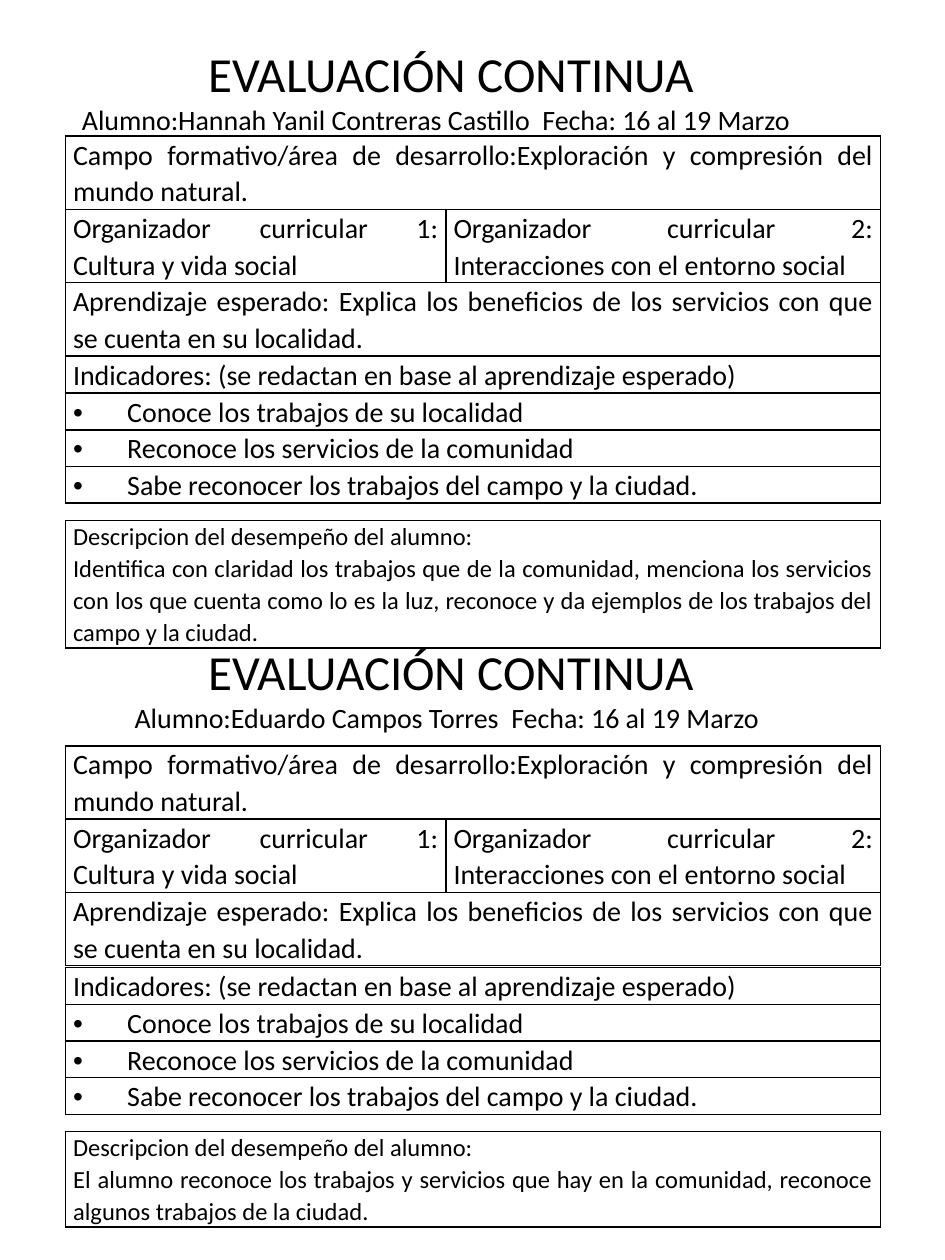
import pptx
import pptx.dml.color
import pptx.enum.text
import pptx.oxml
import pptx.util
from pptx.oxml.ns import nsdecls
from pptx.util import Inches

ALIGN = pptx.enum.text.PP_ALIGN
LEFT, WIDTH = 0.52, 6.47
INDENT = Inches(0.38)
BLACK = "000000"
CELL_FORMAT = {"margin_left": Inches(0.06), "margin_right": Inches(0.06),
               "margin_top": 0, "margin_bottom": 0}
FRAME_FORMAT = {"word_wrap": False,
                "auto_size": pptx.enum.text.MSO_AUTO_SIZE.NONE,
                "vertical_anchor": pptx.enum.text.MSO_ANCHOR.MIDDLE}

SUBJECT_ROWS = [
    ["Campo formativo/área de desarrollo:Exploración y compresión del mundo natural."],
    ["Organizador curricular 1: Cultura y vida social",
     "Organizador curricular 2: Interacciones con el entorno social"],
    ["Aprendizaje esperado: Explica los beneficios de los servicios con que se cuenta en su localidad."],
]
INDICATORS_HEADING = "Indicadores: (se redactan en base al aprendizaje esperado)"
INDICATORS = [
    " Conoce los trabajos de su localidad",
    " Reconoce los servicios de la comunidad",
    " Sabe reconocer los trabajos del campo y la ciudad.",
]
DESCRIPTION_HEADING = "Descripcion del desempeño del alumno:"


def color(value):
    return pptx.dml.color.RGBColor.from_string(value)


def apply_format(target, values):
    for name, value in values.items():
        setattr(target, name, value)


def write_paragraphs(frame, lines, alignment, spacing=1.0):
    """Write (text, size) pairs as paragraphs."""
    for index, (text, size) in enumerate(lines):
        paragraph = frame.add_paragraph() if index else frame.paragraphs[0]
        apply_format(paragraph, {"alignment": alignment, "line_spacing": spacing})
        run = paragraph.add_run()
        run.text = text
        apply_format(run.font, {"size": pptx.util.Pt(size), "name": "Calibri", "bold": False})
        run.font.color.rgb = color(BLACK)


def add_bullet(paragraph):
    properties = paragraph._p.get_or_add_pPr()
    properties.set("marL", str(INDENT))
    properties.set("indent", str(-INDENT))
    properties.append(pptx.oxml.parse_xml(
        f'<a:buFont {nsdecls("a")} typeface="Arial"/>'))
    properties.append(pptx.oxml.parse_xml(f'<a:buChar {nsdecls("a")} char="•"/>'))


def format_cell(cell):
    apply_format(cell, CELL_FORMAT)
    cell.fill.background()
    properties = cell._tc.get_or_add_tcPr()
    for index, side in enumerate(("lnL", "lnR", "lnT", "lnB")):
        properties.insert(index, pptx.oxml.parse_xml(
            f'<a:{side} {nsdecls("a")} w="12700"><a:solidFill>'
            f'<a:srgbClr val="{BLACK}"/></a:solidFill></a:{side}>'))


def add_grid(slide, top, height, row_count, column_widths):
    table = slide.shapes.add_table(
        row_count, len(column_widths), Inches(LEFT), Inches(top),
        Inches(WIDTH), Inches(height)).table
    apply_format(table, {"first_row": False, "horz_banding": False})
    for column, width in zip(table.columns, column_widths):
        column.width = Inches(width)
    for row in table.rows:
        row.height = Inches(height / row_count)
        for cell in row.cells:
            format_cell(cell)
    return table


def add_subject(slide, top):
    table = add_grid(slide, top, 1.71, len(SUBJECT_ROWS), [3.02, 3.45])
    for index, texts in enumerate(SUBJECT_ROWS):
        if len(texts) == 1:
            table.cell(index, 0).merge(table.cell(index, 1))
        for column, text in enumerate(texts):
            write_paragraphs(table.cell(index, column).text_frame, [(text, 16)],
                             ALIGN.JUSTIFY, 1.07)


def add_indicators(slide, top):
    texts = [INDICATORS_HEADING] + INDICATORS
    table = add_grid(slide, top, 1.14, len(texts), [WIDTH])
    for index, text in enumerate(texts):
        frame = table.cell(index, 0).text_frame
        write_paragraphs(frame, [(text, 16)], ALIGN.JUSTIFY, 1.07)
        if index:
            add_bullet(frame.paragraphs[0])


def add_description(slide, top, height, text):
    table = add_grid(slide, top, height, 1, [WIDTH])
    write_paragraphs(table.cell(0, 0).text_frame,
                     [(DESCRIPTION_HEADING, 14), (text, 14)], ALIGN.JUSTIFY, 1.07)


def place_heading(shape, left, top, width, student):
    apply_format(shape, {"left": Inches(left), "top": Inches(top),
                         "width": Inches(width), "height": Inches(0.84)})
    apply_format(shape.text_frame, FRAME_FORMAT)
    write_paragraphs(shape.text_frame, [
        ("EVALUACIÓN CONTINUA", 28),
        (f"Alumno:{student}  Fecha: 16 al 19 Marzo", 16)], ALIGN.CENTER)
    # The student line starts at the left edge of the box
    shape.text_frame.paragraphs[1].alignment = ALIGN.LEFT


def add_evaluation(slide, heading, heading_box, student, tops, description_height, description):
    place_heading(heading, *heading_box, student)
    subject_top, indicators_top, description_top = tops
    add_subject(slide, subject_top)
    add_indicators(slide, indicators_top)
    add_description(slide, description_top, description_height, description)


def main():
    presentation = pptx.Presentation()
    apply_format(presentation, {"slide_width": Inches(7.5), "slide_height": Inches(10)})
    slide = presentation.slides.add_slide(presentation.slide_layouts[5])

    # Upper evaluation
    add_evaluation(
        slide, slide.shapes.title, (0.55, 0.29, 6.06), "Hannah Yanil Contreras Castillo",
        (1.08, 2.83, 4.13), 1.0,
        "Identifica con claridad los trabajos que de la comunidad, menciona los servicios con los "
        "que cuenta como lo es la luz, reconoce y da ejemplos de los trabajos del campo y la ciudad.")

    # Lower evaluation
    add_evaluation(
        slide, slide.shapes.add_textbox(0, 0, 0, 0), (0.97, 5.04, 5.22), "Eduardo Campos Torres",
        (5.92, 7.68, 8.98), 0.75,
        "El alumno reconoce los trabajos y servicios que hay en la comunidad, "
        "reconoce algunos trabajos de la ciudad.")

    presentation.save("out.pptx")


if __name__ == "__main__":
    main()
